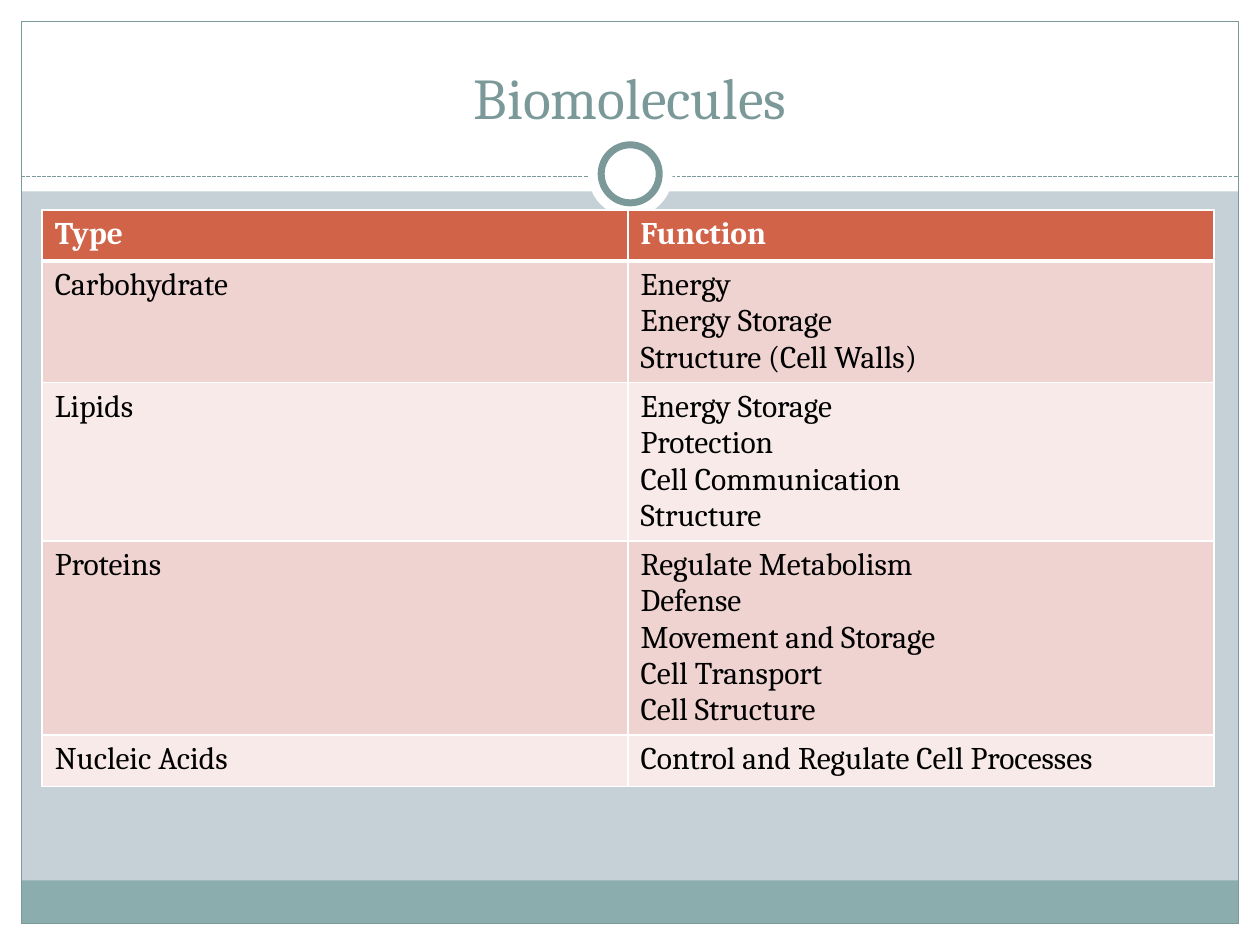
from dataclasses import dataclass

from lxml import etree
from pptx import Presentation
from pptx.dml.color import RGBColor
from pptx.enum.dml import MSO_LINE
from pptx.enum.shapes import MSO_CONNECTOR, MSO_SHAPE
from pptx.enum.text import MSO_ANCHOR, MSO_AUTO_SIZE, PP_ALIGN
from pptx.oxml.ns import qn
from pptx.util import Cm, Pt

RECTANGLE = MSO_SHAPE.RECTANGLE
OVAL = MSO_SHAPE.OVAL
STRAIGHT = MSO_CONNECTOR.STRAIGHT
SYSTEM_DASH = MSO_LINE.SQUARE_DOT
CENTER = PP_ALIGN.CENTER
BOTTOM = MSO_ANCHOR.BOTTOM
NO_AUTOFIT = MSO_AUTO_SIZE.NONE

FONT = "Cambria"
COLORS = {
    "background": "C5D1D7",
    "white": "FFFFFF",
    "black": "000000",
    "teal": "7C999A",
    "footer": "8CADAE",
    "header": "D16349",
    "odd_row": "EED3D0",
    "even_row": "F7EAE9",
}
WIDTH, HEIGHT, MARGIN = 25.4, 19.05, 0.43
INNER_WIDTH, INNER_HEIGHT = WIDTH - 2 * MARGIN, HEIGHT - 2 * MARGIN
BAND_HEIGHT = 3.86
DIVIDER_TOP = 3.56


@dataclass(frozen=True)
class Panel:
    left: float
    top: float
    width: float
    height: float
    fill: str | None = "white"
    line: str | None = None
    line_width: float = 0.75
    outline: int = RECTANGLE


@dataclass(frozen=True)
class Biomolecule:
    name: str
    functions: tuple[str, ...]


FRAME_PANELS = (
    Panel(0, HEIGHT - MARGIN, WIDTH, MARGIN),
    Panel(0, 0, WIDTH, BAND_HEIGHT),
    Panel(0, 0, MARGIN, HEIGHT),
    Panel(WIDTH - MARGIN, 0, MARGIN, HEIGHT),
    Panel(MARGIN, 17.75, INNER_WIDTH, 0.87, "footer"),
    Panel(MARGIN, MARGIN, INNER_WIDTH, INNER_HEIGHT, None, "teal"),
)
RING_PANELS = (
    Panel(11.86, 2.67, 1.7, 1.7, outline=OVAL),
    Panel(12.12, 2.92, 1.17, 1.17, line="teal", line_width=4, outline=OVAL),
)
BIOMOLECULES = (
    Biomolecule("Carbohydrate", ("Energy\vEnergy Storage", "Structure (Cell Walls)")),
    Biomolecule("Lipids", ("Energy Storage", "Protection", "Cell Communication", "Structure")),
    Biomolecule(
        "Proteins",
        ("Regulate Metabolism", "Defense", "Movement and Storage", "Cell Transport", "Cell Structure"),
    ),
    Biomolecule("Nucleic Acids", ("Control and Regulate Cell Processes",)),
)


def color(name: str) -> RGBColor:
    return RGBColor.from_string(COLORS[name])


def draw_panel(slide, panel: Panel) -> None:
    shape = slide.shapes.add_shape(
        panel.outline, Cm(panel.left), Cm(panel.top), Cm(panel.width), Cm(panel.height)
    )
    shape.shadow.inherit = False
    if panel.fill:
        shape.fill.solid()
        shape.fill.fore_color.rgb = color(panel.fill)
    else:
        shape.fill.background()
    if panel.line:
        shape.line.color.rgb = color(panel.line)
        shape.line.width = Pt(panel.line_width)
    else:
        shape.line.fill.background()


def draw_divider(slide) -> None:
    connector = slide.shapes.add_connector(
        STRAIGHT, Cm(MARGIN), Cm(DIVIDER_TOP), Cm(WIDTH - MARGIN), Cm(DIVIDER_TOP)
    )
    connector.line.color.rgb = color("teal")
    connector.line.width = Pt(0.75)
    connector.line.dash_style = SYSTEM_DASH
    etree.SubElement(connector.element.spPr, qn("a:effectLst"))


def format_paragraph(paragraph, size: float, color_name: str, bold: bool = False) -> None:
    paragraph.font.name = FONT
    paragraph.font.size = Pt(size)
    paragraph.font.bold = bold
    paragraph.font.color.rgb = color(color_name)


def write_title(slide, text: str) -> None:
    title = slide.shapes.title
    title.element.getparent().append(title.element)
    title.left, title.top, title.width, title.height = Cm(0.85), Cm(0.64), Cm(23.7), Cm(2.12)
    frame = title.text_frame
    frame.text = text
    frame.auto_size = NO_AUTOFIT
    frame.vertical_anchor = BOTTOM
    paragraph = frame.paragraphs[0]
    paragraph.alignment = CENTER
    format_paragraph(paragraph, 33, "teal")


def set_borders(cell, bottom_width: float) -> None:
    properties = cell._tc.get_or_add_tcPr()
    widths = {"a:lnL": 1, "a:lnR": 1, "a:lnT": 1, "a:lnB": bottom_width}
    for index, (side, width) in enumerate(widths.items()):
        border = etree.Element(qn(side), w=str(Pt(width)))
        fill = etree.SubElement(border, qn("a:solidFill"))
        etree.SubElement(fill, qn("a:srgbClr"), val=COLORS["white"])
        properties.insert(index, border)


def write_cell(cell, lines: tuple[str, ...], fill: str, is_header: bool) -> None:
    cell.fill.solid()
    cell.fill.fore_color.rgb = color(fill)
    set_borders(cell, 3 if is_header else 1)
    cell.text = "\n".join(lines)
    for paragraph in cell.text_frame.paragraphs:
        format_paragraph(paragraph, 18, "white" if is_header else "black", is_header)


def draw_table(slide, header: Biomolecule, biomolecules: tuple[Biomolecule, ...]) -> None:
    entries = (header, *biomolecules)
    table_height = Cm(11.96)
    table_frame = slide.shapes.add_table(
        len(entries), 2, Cm(0.85), Cm(4.23), Cm(23.62), table_height
    )
    table = table_frame.table
    for index, (row, entry) in enumerate(zip(table.rows, entries)):
        row.height = Cm(1.03)
        is_header = index == 0
        fill = "header" if is_header else "odd_row" if index % 2 else "even_row"
        for cell, lines in zip(row.cells, ((entry.name,), entry.functions)):
            write_cell(cell, lines, fill, is_header)
    table_frame.height = table_height


def main() -> None:
    presentation = Presentation()
    presentation.slide_width = Cm(WIDTH)
    presentation.slide_height = Cm(HEIGHT)
    slide = presentation.slides.add_slide(presentation.slide_layouts.get_by_name("Title Only"))
    slide.background.fill.solid()
    slide.background.fill.fore_color.rgb = color("background")
    for panel in FRAME_PANELS:
        draw_panel(slide, panel)
    draw_divider(slide)
    for panel in RING_PANELS:
        draw_panel(slide, panel)
    write_title(slide, "Biomolecules")
    draw_table(slide, Biomolecule("Type", ("Function",)), BIOMOLECULES)
    presentation.save("out.pptx")


if __name__ == "__main__":
    main()
